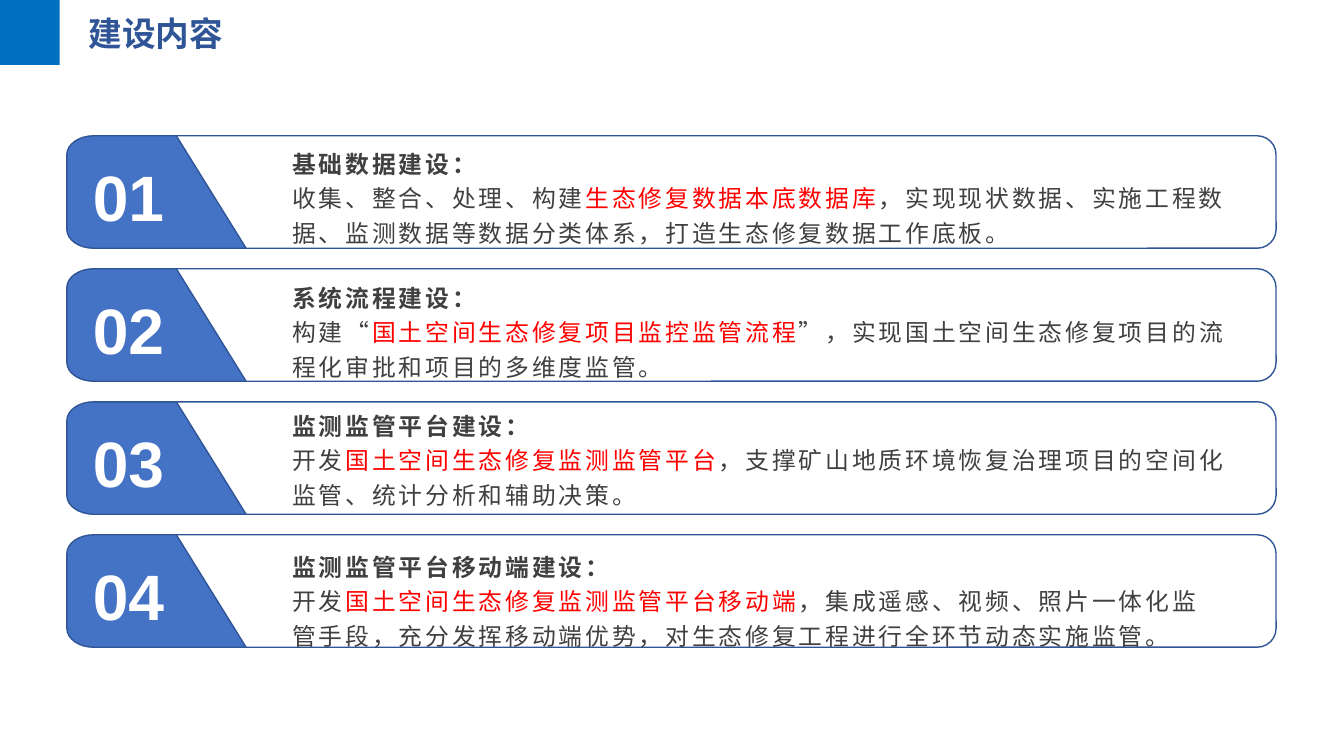
from dataclasses import dataclass

import pptx
import pptx.dml.color
import pptx.enum.shapes
import pptx.enum.text
import pptx.util
from lxml import etree
from pptx.oxml.ns import qn
from pptx.util import Pt

TITLE = "建设内容"

# heading, text before the key phrase, key phrase, text after, text top, text width
ITEMS = [
    ("基础数据建设：", "收集、整合、处理、构建", "生态修复数据本底数据库",
     "，实现现状数据、实施工程数据、监测数据等数据分类体系，打造生态修复数据工作底板。",
     99.4, 700),
    ("系统流程建设：", "构建“", "国土空间生态修复项目监控监管流程",
     "”，实现国土空间生态修复项目的流程化审批和项目的多维度监管。",
     195.1, 692.6),
    ("监测监管平台建设：", "开发", "国土空间生态修复监测监管平台",
     "，支撑矿山地质环境恢复治理项目的空间化监管、统计分析和辅助决策。",
     286.4, 692.6),
    ("监测监管平台移动端建设：", "开发", "国土空间生态修复监测监管平台移动端",
     "，集成遥感、视频、照片一体化监管手段，充分发挥移动端优势，对生态修复工程进行全环节动态实施监管。",
     387.2, 671),
]


@dataclass(frozen=True)
class Theme:
    accent: str = "0070C0"
    tab: str = "4472C4"
    outline: str = "2F5597"
    body: str = "404040"
    key: str = "FF0000"
    white: str = "FFFFFF"
    latin: str = "Arial"
    chinese: str = "Noto Sans CJK SC"
    title_size: float = 24
    body_size: float = 17
    number_size: float = 45.8


THEME = Theme()
ROW_TOP, ROW_STEP, ROW_HEIGHT = 97, 95, 80.3
BAR_LEFT, BAR_WIDTH = 91.4, 820.1
TAB_LEFT, TAB_TOP_RIGHT, TAB_RIGHT = 47.8, 126, 175.8
CORNER_X, CORNER_Y = 19.2, 13.4
ROUNDNESS = 0.55


def rgb(value):
    return pptx.dml.color.RGBColor.from_string(value)


def style_shape(shape, fill=None, line=None):
    shape.shadow.inherit = False
    if fill:
        shape.fill.solid()
        shape.fill.fore_color.rgb = rgb(fill)
    else:
        shape.fill.background()
    if line:
        shape.line.color.rgb = rgb(line)
        shape.line.width = Pt(1)
    else:
        shape.line.fill.background()


def add_span(para, text, size, color, bold=False, latin=THEME.latin, tracking=0):
    span = para.add_run()
    span.text = text
    font = span.font
    font.size, font.bold, font.name = Pt(size), bold, latin
    font.color.rgb = rgb(color)
    properties = span._r.get_or_add_rPr()
    if tracking:
        properties.set("spc", str(tracking * 100))
    etree.SubElement(properties, qn("a:ea")).set("typeface", THEME.chinese)


def add_text_box(page, left, top, width, height):
    box = page.shapes.add_textbox(Pt(left), Pt(top), Pt(width), Pt(height))
    box.text_frame.word_wrap = True
    return box.text_frame


def round_corner(segment, start, corner, end):
    """Turn a straight path segment into a curve bulging towards the corner."""
    curve = etree.Element(qn("a:cubicBezTo"))
    controls = [tuple(a + ROUNDNESS * (c - a) for a, c in zip(anchor, corner))
                for anchor in (start, end)]
    for x, y in controls + [end]:
        point = etree.SubElement(curve, qn("a:pt"))
        point.set("x", str(Pt(x)))
        point.set("y", str(Pt(y)))
    segment.getparent().replace(segment, curve)


def add_tab(page, top):
    bottom = top + ROW_HEIGHT
    curve_x = TAB_LEFT + CORNER_X
    builder = page.shapes.build_freeform(Pt(curve_x), Pt(top), scale=1.0)
    corners = [(TAB_TOP_RIGHT, top), (TAB_RIGHT, bottom), (curve_x, bottom),
               (TAB_LEFT, bottom - CORNER_Y), (TAB_LEFT, top + CORNER_Y),
               (curve_x, top)]
    builder.add_line_segments([(Pt(x), Pt(y)) for x, y in corners], close=True)
    tab = builder.convert_to_shape()
    segments = list(tab._element.iter(qn("a:lnTo")))
    round_corner(segments[3], (CORNER_X, ROW_HEIGHT), (0, ROW_HEIGHT),
                 (0, ROW_HEIGHT - CORNER_Y))
    round_corner(segments[5], (0, CORNER_Y), (0, 0), (CORNER_X, 0))
    style_shape(tab, THEME.tab, THEME.outline)


def add_item(page, index, item):
    heading, before, key, after, text_top, text_width = item
    top = ROW_TOP + index * ROW_STEP
    bar = page.shapes.add_shape(
        pptx.enum.shapes.MSO_SHAPE.ROUNDED_RECTANGLE,
        Pt(BAR_LEFT), Pt(top), Pt(BAR_WIDTH), Pt(ROW_HEIGHT))
    style_shape(bar, line=THEME.outline)
    add_tab(page, top)

    frame = add_text_box(page, 201.6, text_top, text_width, 34.6)
    lines = [[(heading, THEME.body, True)],
             [(before, THEME.body, False), (key, THEME.key, False),
              (after, THEME.body, False)]]
    for number, spans in enumerate(lines):
        para = frame.add_paragraph() if number else frame.paragraphs[0]
        para.line_spacing = 1.2
        for text, color, bold in spans:
            add_span(para, text, THEME.body_size, color, bold, tracking=2)

    frame = add_text_box(page, 57.6, top + 5.1, 68.4, 70.6)
    frame.vertical_anchor = pptx.enum.text.MSO_ANCHOR.MIDDLE
    para = frame.paragraphs[0]
    para.alignment = pptx.enum.text.PP_ALIGN.CENTER
    para.line_spacing = 1.1
    add_span(para, f"{index + 1:02}", THEME.number_size, THEME.white, True)


def add_title(page):
    title = page.shapes.title
    title.left, title.top, title.width, title.height = Pt(56.2), Pt(5.8), Pt(189.4), Pt(36)
    frame = title.text_frame
    frame.auto_size = pptx.enum.text.MSO_AUTO_SIZE.NONE
    frame.vertical_anchor = pptx.enum.text.MSO_ANCHOR.TOP
    para = frame.paragraphs[0]
    para.alignment = pptx.enum.text.PP_ALIGN.LEFT
    add_span(para, TITLE, THEME.title_size, THEME.outline, True, THEME.chinese)


def main():
    deck = pptx.Presentation()
    deck.slide_width, deck.slide_height = Pt(960), Pt(540)
    page = deck.slides.add_slide(deck.slide_layouts[5])
    add_title(page)
    marker = page.shapes.add_shape(
        pptx.enum.shapes.MSO_SHAPE.RECTANGLE, 0, 0, Pt(42.7), Pt(46.4))
    style_shape(marker, THEME.accent)
    for index, item in enumerate(ITEMS):
        add_item(page, index, item)
    deck.save("out.pptx")


if __name__ == "__main__":
    main()
